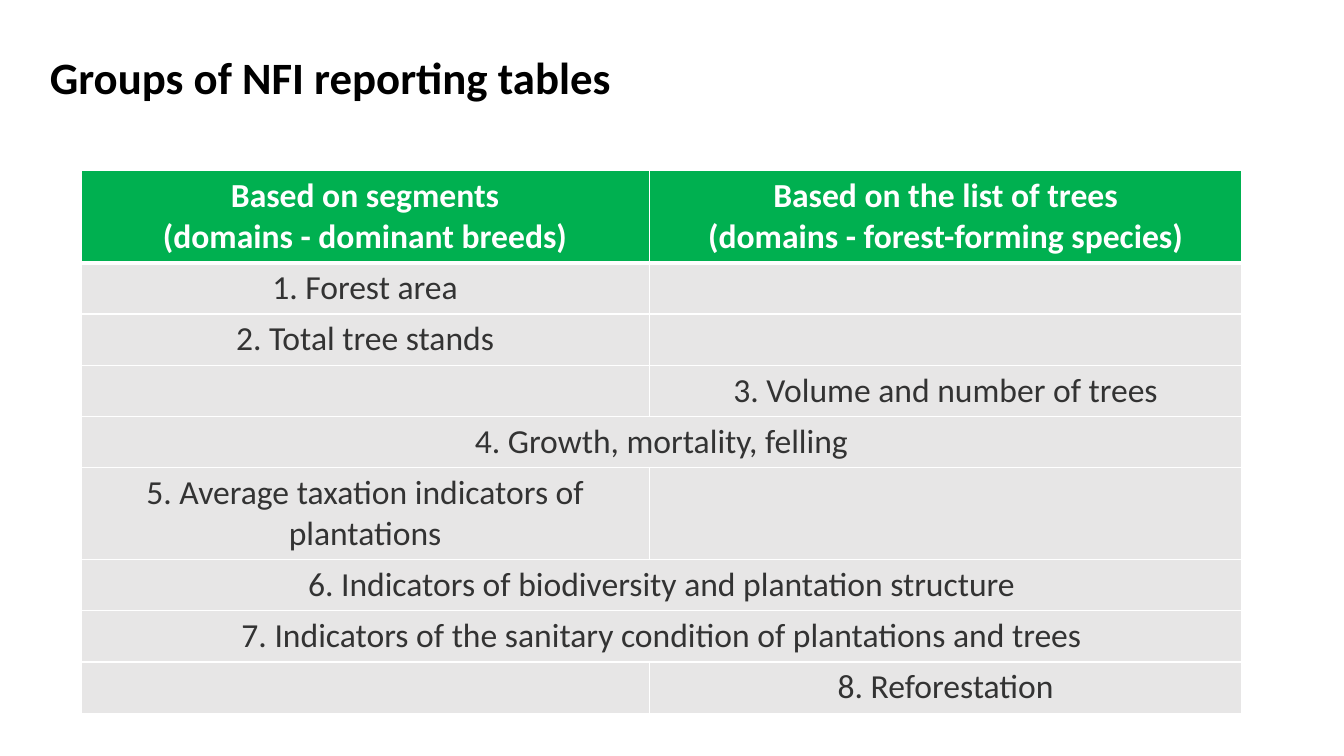
from lxml.etree import SubElement
from pptx import Presentation
from pptx.dml.color import RGBColor
from pptx.enum.text import MSO_ANCHOR, PP_ALIGN
from pptx.oxml.ns import qn
from pptx.util import Cm, Pt

BLACK = RGBColor(0x00, 0x00, 0x00)
WHITE = RGBColor(0xFF, 0xFF, 0xFF)
GREEN = RGBColor(0x00, 0xB0, 0x50)
PALE_GREY = RGBColor(0xE7, 0xE6, 0xE6)
DARK_GREY = RGBColor(0x33, 0x33, 0x33)

SEGMENTS, TREES, BOTH = "segments", "trees", "both"
HEADINGS = (
    "Based on segments\n(domains - dominant breeds)",
    "Based on the list of trees\n(domains - forest-forming species)",
)
GROUPS = (
    (SEGMENTS, "1. Forest area"),
    (SEGMENTS, "2. Total tree stands"),
    (TREES, "3. Volume and number of trees"),
    (BOTH, "4. Growth, mortality, felling"),
    (SEGMENTS, "5. Average taxation indicators of plantations"),
    (BOTH, "6. Indicators of biodiversity and plantation structure"),
    (BOTH, "7. Indicators of the sanitary condition of plantations and trees"),
    (TREES, "8. Reforestation"),
)
COLUMN_WIDTHS = (Cm(14.32), Cm(14.94))
ROW_HEIGHT = Cm(1.29)
HEADER_HEIGHT = Cm(2.32)


class ReportSlide:
    """Holds the style and the slide being filled."""

    font_name = "Calibri"

    def __init__(self, presentation):
        self.slide = presentation.slides.add_slide(presentation.slide_layouts[5])

    def style(self, paragraph, size, color, bold, align):
        """Formats one paragraph and its runs."""
        paragraph.alignment = align
        for font in [paragraph.font] + [run.font for run in paragraph.runs]:
            font.name = self.font_name
            font.size = Pt(size)
            font.bold = bold
            font.color.rgb = color

    def title(self, text, left, top, width, height):
        """Places and formats the title placeholder."""
        heading = self.slide.shapes.title
        heading.left, heading.top, heading.width, heading.height = left, top, width, height
        frame = heading.text_frame
        frame.text = text
        frame.word_wrap = True
        frame.vertical_anchor = MSO_ANCHOR.MIDDLE
        frame.paragraphs[0].line_spacing = 0.9
        self.style(frame.paragraphs[0], 32, BLACK, True, PP_ALIGN.LEFT)

    def borders(self, cell, bottom_width):
        """Draws white lines around a cell."""
        properties = cell._tc.get_or_add_tcPr()
        for position, side in enumerate("LRTB"):
            width = bottom_width if side == "B" else 1
            line = SubElement(properties, qn(f"a:ln{side}"), w=str(Pt(width)))
            fill = SubElement(line, qn("a:solidFill"))
            SubElement(fill, qn("a:srgbClr"), val=str(WHITE))
            properties.insert(position, line)

    def cell(self, cell, text, header):
        """Fills and formats one table cell."""
        cell.fill.solid()
        cell.fill.fore_color.rgb = GREEN if header else PALE_GREY
        self.borders(cell, 3 if header else 1)
        cell.text_frame.text = text
        for paragraph in cell.text_frame.paragraphs:
            self.style(paragraph, 24, WHITE if header else DARK_GREY, header, PP_ALIGN.CENTER)

    def groups_table(self, left, top):
        """Builds the table of reporting groups."""
        height = HEADER_HEIGHT + ROW_HEIGHT * len(GROUPS)
        table = self.slide.shapes.add_table(
            len(GROUPS) + 1, 2, left, top, sum(COLUMN_WIDTHS), height
        ).table
        for column, width in zip(table.columns, COLUMN_WIDTHS):
            column.width = width
        for row in table.rows:
            row.height = ROW_HEIGHT
        table.rows[0].height = HEADER_HEIGHT
        for column, heading in enumerate(HEADINGS):
            self.cell(table.cell(0, column), heading, True)
        for row, (basis, group) in enumerate(GROUPS, start=1):
            by_segments, by_trees = table.cell(row, 0), table.cell(row, 1)
            self.cell(by_segments, "" if basis == TREES else group, False)
            self.cell(by_trees, group if basis == TREES else "", False)
            if basis == BOTH:
                by_segments.merge(by_trees)


def main():
    """Builds and saves the slide."""
    presentation = Presentation()
    presentation.slide_width = Cm(33.87)
    presentation.slide_height = Cm(19.05)
    report = ReportSlide(presentation)
    report.title("Groups of NFI reporting tables", Cm(1), Cm(1.25), Cm(32.53), Cm(1.52))
    report.groups_table(Cm(2.04), Cm(4.3))
    presentation.save("out.pptx")


if __name__ == "__main__":
    main()
